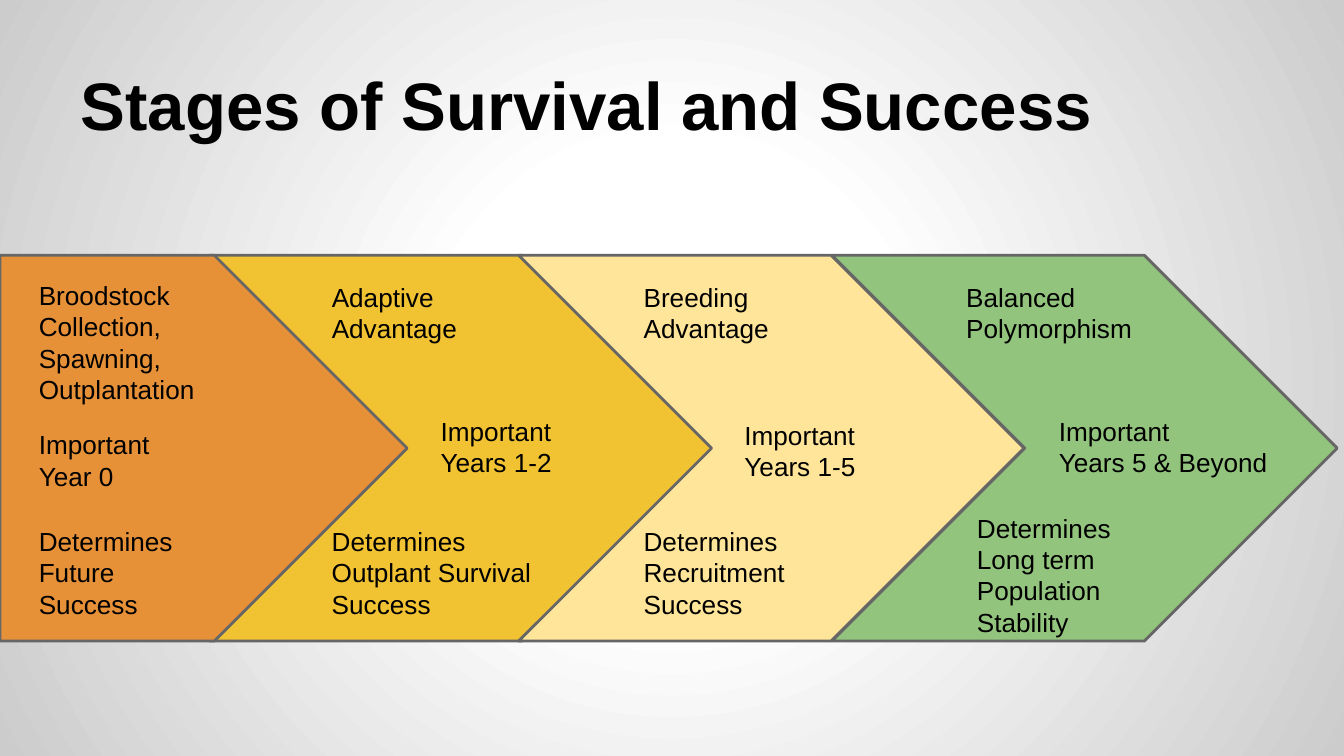
from dataclasses import dataclass

from pptx import Presentation
from pptx.dml.color import RGBColor
from pptx.enum.shapes import MSO_SHAPE
from pptx.enum.text import MSO_ANCHOR, MSO_AUTO_SIZE, PP_ALIGN
from pptx.oxml import parse_xml
from pptx.oxml.ns import nsdecls, qn
from pptx.util import Inches, Pt

CHEVRON = MSO_SHAPE.CHEVRON
PLATE = MSO_SHAPE.PENTAGON
TOP = MSO_ANCHOR.TOP
BOTTOM = MSO_ANCHOR.BOTTOM
LEFT = PP_ALIGN.LEFT
NO_FIT = MSO_AUTO_SIZE.NONE


@dataclass(frozen=True)
class Theme:
    font: str = "Arial"
    ink: str = "000000"
    edge: str = "666666"
    orange: str = "E69138"
    gold: str = "F1C232"
    cream: str = "FFE599"
    green: str = "93C47D"
    glow: tuple = ((0, "FFFFFF"), (30, "FFFFFF"), (100, "CCCCCC"))
    head: int = 36
    body: int = 14
    line: float = 1.5


THEME = Theme()
ROW_TOP, ROW_HIGH = 1.9, 2.87

STAGES = [
    (CHEVRON, 1.56, 3.76, THEME.gold, [
        ("Adaptive Advantage", (2.37, 1.99, 1.61, 0.49)),
        ("Important\nYears 1-2", (3.18, 2.99, 1.51, 0.55)),
        ("Determines\nOutplant Survival Success", (2.37, 3.81, 1.74, 0.71)),
    ]),
    (CHEVRON, 3.86, 3.76, THEME.cream, [
        ("Breeding\nAdvantage", (4.69, 1.99, 1.68, 0.55)),
        ("Important\nYears 1-5", (5.44, 3.02, 1.68, 0.62)),
        ("Determines\nRecruitment\nSuccess", (4.69, 3.81, 1.68, 0.71)),
    ]),
    (CHEVRON, 6.19, 3.76, THEME.green, [
        ("Balanced\nPolymorphism", (7.09, 1.99, 1.61, 0.55)),
        ("Important\nYears 5 & Beyond", (7.78, 2.99, 2.01, 0.55)),
        ("Determines\nLong term Population\nStability", (7.17, 3.71, 2.01, 0.98)),
    ]),
    (PLATE, 0, 3.03, THEME.orange, [
        ("Broodstock Collection, Spawning, Outplantation", (0.19, 1.98, 1.45, 0.53)),
        ("Determines Future Success", (0.19, 3.81, 1.32, 0.94)),
        ("Important\nYear 0", (0.19, 3.09, 1.68, 0.49)),
    ]),
]


def rgb(code):
    return RGBColor.from_string(code)


def write(frame, text, size=THEME.body, color=THEME.ink, bold=False, anchor=TOP):
    frame.text = text
    frame.word_wrap = True
    frame.auto_size = NO_FIT
    frame.vertical_anchor = anchor
    frame.margin_left = frame.margin_right = Inches(0.1)
    frame.margin_top = frame.margin_bottom = Inches(0.1)
    for para in frame.paragraphs:
        para.alignment = LEFT
        para.space_before = Pt(0)
        for run in para.runs:
            font = run.font
            font.name = THEME.font
            font.size = Pt(size)
            font.bold = bold
            font.color.rgb = rgb(color)


def add_glow(slide):
    slide.background.fill.solid()
    stops = "".join(
        f'<a:gs pos="{at * 1000}"><a:srgbClr val="{code}"/></a:gs>'
        for at, code in THEME.glow
    )
    glow = parse_xml(
        f'<a:gradFill {nsdecls("a")}><a:gsLst>{stops}</a:gsLst>'
        '<a:path path="circle">'
        '<a:fillToRect l="50000" t="50000" r="50000" b="50000"/>'
        "</a:path></a:gradFill>"
    )
    back = slide.element.find(".//" + qn("p:bgPr"))
    back.replace(back.find(qn("a:solidFill")), glow)


def add_title(slide, text):
    title = slide.shapes.title
    title.left, title.top = Inches(0.5), Inches(0.23)
    title.width, title.height = Inches(9), Inches(0.94)
    write(title.text_frame, text, size=THEME.head, bold=True, anchor=BOTTOM)


def add_arrow(shapes, kind, left, width, color):
    arrow = shapes.add_shape(
        kind, Inches(left), Inches(ROW_TOP), Inches(width), Inches(ROW_HIGH)
    )
    arrow.adjustments[0] = 0.5
    arrow.shadow.inherit = False
    arrow.fill.solid()
    arrow.fill.fore_color.rgb = rgb(color)
    arrow.line.color.rgb = rgb(THEME.edge)
    arrow.line.width = Pt(THEME.line)


def add_note(shapes, text, place):
    box = shapes.add_textbox(*map(Inches, place))
    write(box.text_frame, text)


def add_stage(slide, kind, left, width, color, notes):
    shapes = slide.shapes.add_group_shape().shapes
    add_arrow(shapes, kind, left, width, color)
    for text, place in notes:
        add_note(shapes, text, place)


def main():
    deck = Presentation()
    deck.slide_width = Inches(10)
    deck.slide_height = Inches(10 * 9 / 16)
    slide = deck.slides.add_slide(deck.slide_layouts[5])
    add_glow(slide)
    add_title(slide, "Stages of Survival and Success")
    for stage in STAGES:
        add_stage(slide, *stage)
    deck.save("out.pptx")


if __name__ == "__main__":
    main()
